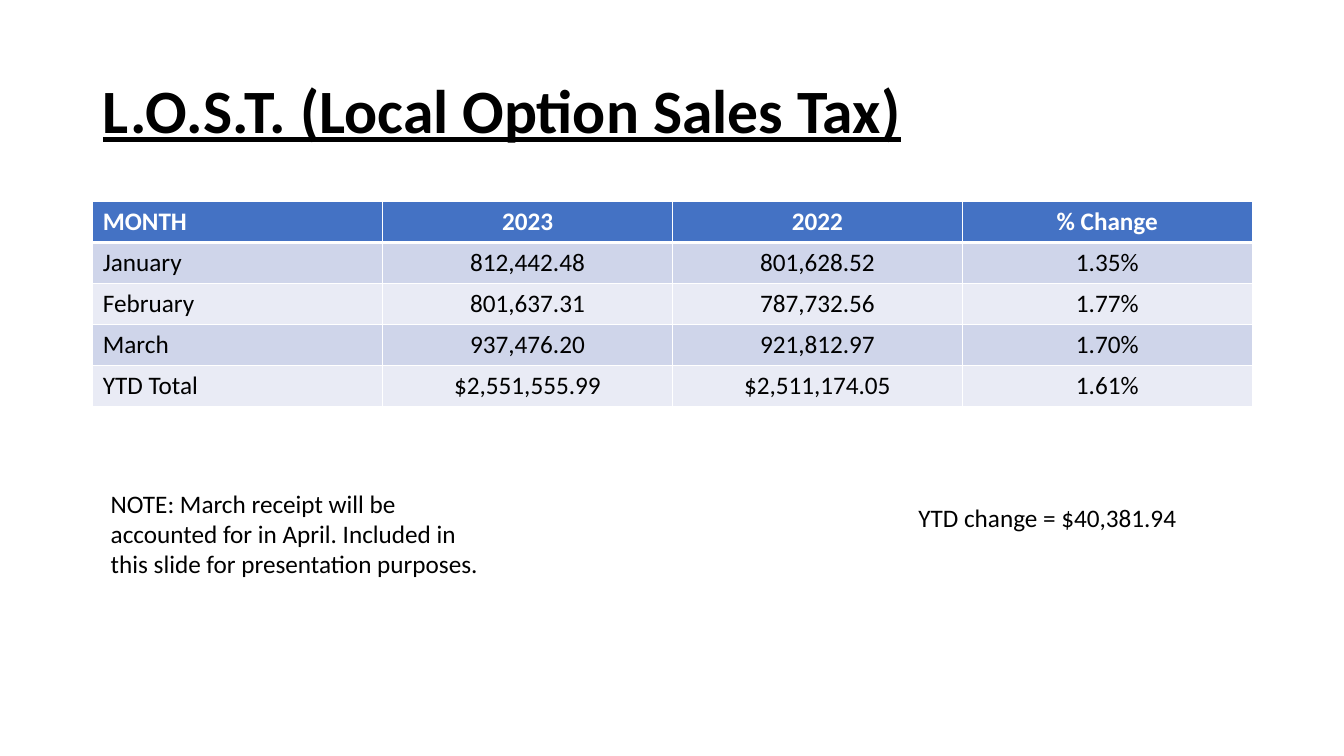
import pptx
import pptx.util
import pptx.dml.color
import pptx.enum.text
import pptx.oxml
from dataclasses import dataclass

Inches, Pt = pptx.util.Inches, pptx.util.Pt
ALIGN, ANCHOR = pptx.enum.text.PP_ALIGN, pptx.enum.text.MSO_ANCHOR


@dataclass(frozen=True)
class Theme:
    font: str = "Calibri"
    title_size: int = 44
    body_size: int = 18
    text: str = "000000"
    light: str = "FFFFFF"
    header: str = "4472C4"
    bands: tuple = ("CFD5EA", "E9EBF5")
    thin: int = 1
    thick: int = 3


THEME = Theme()

TAX_ROWS = [
    ("MONTH", "2023", "2022", "% Change"),
    ("January", "812,442.48", "801,628.52", "1.35%"),
    ("February", "801,637.31", "787,732.56", "1.77%"),
    ("March", "937,476.20", "921,812.97", "1.70%"),
    ("YTD Total", "$2,551,555.99", "$2,511,174.05", "1.61%"),
]


def rgb(color):
    return pptx.dml.color.RGBColor.from_string(color)


def write(tf, text, size, color=THEME.text, bold=False, align=ALIGN.LEFT):
    tf.text = text
    p = tf.paragraphs[0]
    p.alignment = align
    font = p.runs[0].font
    font.name, font.size, font.bold = THEME.font, Pt(size), bold
    font.color.rgb = rgb(color)
    return p


def set_borders(cell, top, bottom):
    tcPr = cell._tc.get_or_add_tcPr()
    widths = {"lnL": THEME.thin, "lnR": THEME.thin, "lnT": top, "lnB": bottom}
    for tag, width in widths.items():
        tcPr.append(pptx.oxml.parse_xml(
            f'<a:{tag} xmlns:a="http://schemas.openxmlformats.org/drawingml/2006/main" '
            f'w="{Pt(width)}"><a:solidFill><a:srgbClr val="{THEME.light}"/>'
            f'</a:solidFill></a:{tag}>'))


def add_title(s, text, left, top, width, height):
    sp = s.shapes.title
    sp.left, sp.top = Inches(left), Inches(top)
    sp.width, sp.height = Inches(width), Inches(height)
    sp.text_frame.vertical_anchor = ANCHOR.MIDDLE
    p = write(sp.text_frame, text, THEME.title_size, bold=True)
    p.line_spacing = 0.9
    p.runs[0].font.underline = True


def add_tax_table(s, rows, left, top, width, height):
    table = s.shapes.add_table(len(rows), len(rows[0]), Inches(left), Inches(top),
                               Inches(width), Inches(height)).table
    for i, values in enumerate(rows):
        is_header = i == 0
        fill = THEME.header if is_header else THEME.bands[(i - 1) % 2]
        for j, value in enumerate(values):
            cell = table.cell(i, j)
            # The heavy rule sits between the header and the first month
            set_borders(cell, THEME.thick if i == 1 else THEME.thin,
                        THEME.thick if is_header else THEME.thin)
            cell.fill.solid()
            cell.fill.fore_color.rgb = rgb(fill)
            write(cell.text_frame, value, THEME.body_size,
                  THEME.light if is_header else THEME.text, is_header,
                  ALIGN.CENTER if j else ALIGN.LEFT)


def add_note(s, text, left, top, width, height):
    tf = s.shapes.add_textbox(Inches(left), Inches(top),
                              Inches(width), Inches(height)).text_frame
    tf.word_wrap = True
    tf.auto_size = pptx.enum.text.MSO_AUTO_SIZE.SHAPE_TO_FIT_TEXT
    write(tf, text, THEME.body_size)


def build_tax_slide(prs):
    s = prs.slides.add_slide(prs.slide_layouts[5])
    left, width = 0.92, 11.5
    # Title
    add_title(s, "L.O.S.T. (Local Option Sales Tax)", left, 0.4, width, 1.45)
    # Monthly receipts
    add_tax_table(s, TAX_ROWS, left, 2, width, 2.03)
    # Notes below the table
    add_note(s, "YTD change = $40,381.94", 9.01, 4.93, 2.99, 0.4)
    add_note(s, "NOTE: March receipt will be accounted for in April. "
                "Included in this slide for presentation purposes.", 1, 4.79, 3.94, 1.01)


def main():
    prs = pptx.Presentation()
    prs.slide_width, prs.slide_height = Inches(13.33), Inches(7.5)
    build_tax_slide(prs)
    prs.save("out.pptx")


if __name__ == "__main__":
    main()
